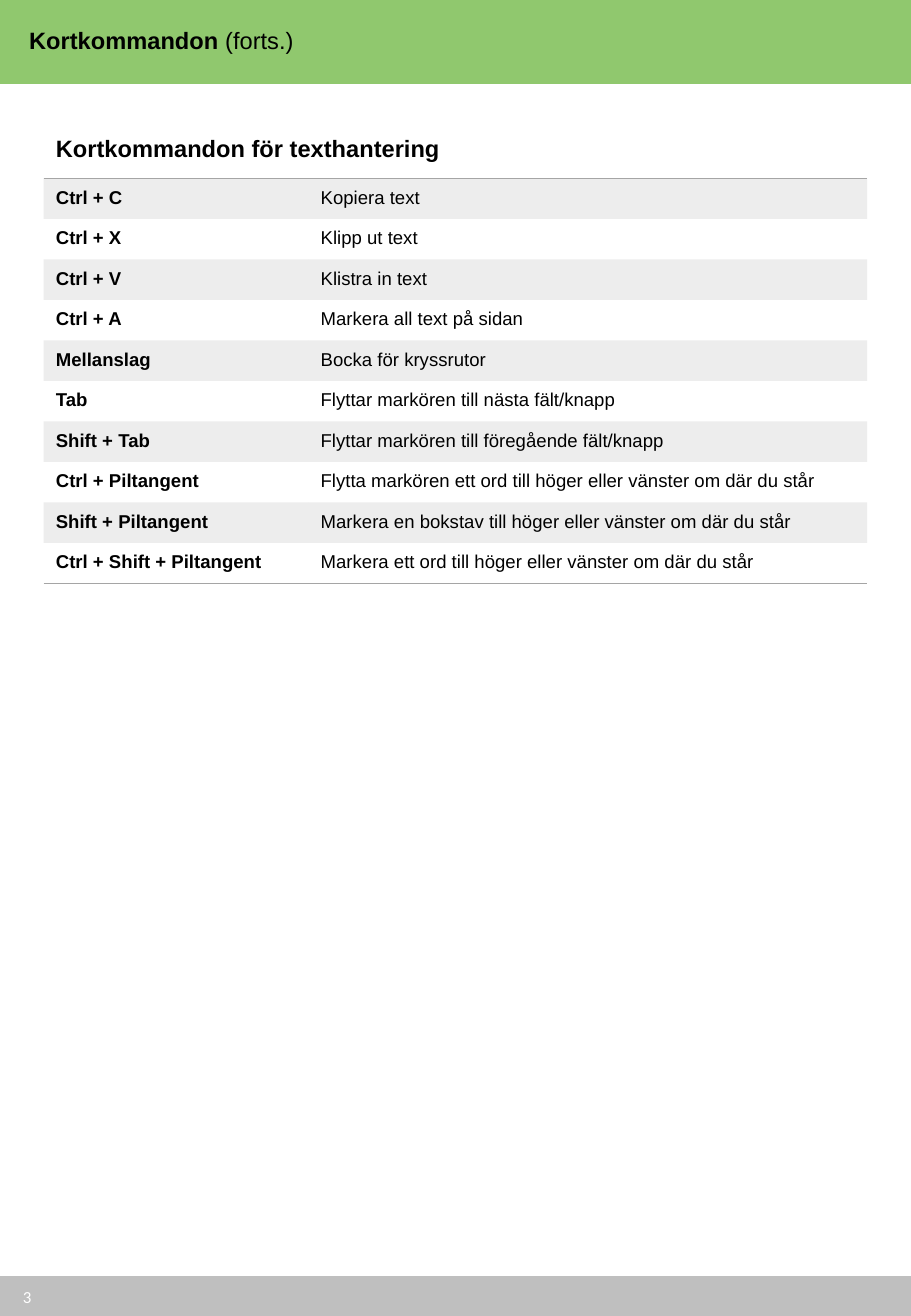
from pptx import Presentation
from pptx.dml.color import RGBColor
from pptx.enum.shapes import MSO_SHAPE as Shape
from pptx.enum.text import MSO_ANCHOR as Anchor, PP_ALIGN as Align
from pptx.oxml.ns import qn
from pptx.util import Inches, Pt
from lxml.etree import SubElement

WIDTH, HEIGHT = 7.5, 10.83
GREEN, GREY, RULE = "90C86E", "BFBFBF", "A5A5A5"
NO_STYLE = "{2D5ABB26-0587-4C30-8999-92F81FD0307C}"
HEADING = "Kortkommandon för texthantering"
SHORTCUTS = [
    ("Ctrl + C", "Kopiera text"),
    ("Ctrl + X", "Klipp ut text"),
    ("Ctrl + V", "Klistra in text"),
    ("Ctrl + A", "Markera all text på sidan"),
    ("Mellanslag", "Bocka för kryssrutor"),
    ("Tab", "Flyttar markören till nästa fält/knapp"),
    ("Shift + Tab", "Flyttar markören till föregående fält/knapp"),
    ("Ctrl + Piltangent", "Flytta markören ett ord till höger eller vänster om där du står"),
    ("Shift + Piltangent", "Markera en bokstav till höger eller vänster om där du står"),
    ("Ctrl + Shift + Piltangent", "Markera ett ord till höger eller vänster om där du står"),
]


def paint(color_format, hex_color):
    color_format.rgb = RGBColor.from_string(hex_color)


def write(paragraph, text, size=11, bold=False, color="000000", font="Arial"):
    run = paragraph.add_run()
    run.text = text
    run.font.size, run.font.bold, run.font.name = Pt(size), bold, font
    paint(run.font.color, color)


def set_margins(holder, left, top, right, bottom):
    holder.margin_left, holder.margin_top = Pt(left), Pt(top)
    holder.margin_right, holder.margin_bottom = Pt(right), Pt(bottom)


class Page:
    def __init__(self, deck):
        self.slide = deck.slides.add_slide(deck.slide_layouts[6])
        self.width, self.height = deck.slide_width, deck.slide_height

    def place(self, left, top, width, height):
        return (int(left * self.width), int(top * self.height),
                int(width * self.width), int(height * self.height))

    def band(self, top, height, color, outlined=False):
        band = self.slide.shapes.add_shape(Shape.RECTANGLE, *self.place(0, top, 1, height))
        band.shadow.inherit = False
        band.fill.solid()
        paint(band.fill.fore_color, color)
        if outlined:
            paint(band.line.color, color)
            band.line.width = Pt(0.75)
        else:
            band.line.fill.background()
        return band.text_frame

    def title(self, strong, light):
        frame = self.band(0, 0.69 / HEIGHT, GREEN)
        frame.word_wrap = True
        frame.vertical_anchor = Anchor.TOP
        set_margins(frame, 17.3, 17.3, 11.5, 17.3)
        line = frame.paragraphs[0]
        line.alignment, line.line_spacing = Align.LEFT, 0.9
        write(line, strong, size=14, bold=True)
        write(line, light, size=14)

    def page_number(self, number):
        place = self.place(0.09 / WIDTH, 10.48 / HEIGHT, 1.69 / WIDTH, 0.38 / HEIGHT)
        frame = self.slide.shapes.add_textbox(*place).text_frame
        frame.word_wrap = True
        frame.vertical_anchor = Anchor.MIDDLE
        write(frame.paragraphs[0], number, size=10, color="FFFFFF", font="Calibri")

    def shortcut_table(self, heading, shortcuts):
        place = self.place(0.36 / WIDTH, 1 / HEIGHT, 6.78 / WIDTH, 3.73 / HEIGHT)
        frame = self.slide.shapes.add_table(len(shortcuts) + 1, 2, *place)
        table = frame.table
        table.first_row = table.horz_banding = False
        frame._element.find(".//" + qn("a:tableStyleId")).text = NO_STYLE
        for column, width in zip(table.columns, (2.18, 4.6)):
            column.width = Inches(width)
        for row in table.rows:
            row.height = Pt(23.6)
        table.rows[0].height = Pt(33)
        table.cell(0, 0).merge(table.cell(0, 1))
        self.cell(table.cell(0, 0), heading, inset=8.4, size=14, bold=True)
        for index, shortcut in enumerate(shortcuts, 1):
            for column, text in enumerate(shortcut):
                self.cell(table.cell(index, column), text, shaded=index % 2 == 1,
                          bold=column == 0)
        for index in (0, len(shortcuts)):
            for cell in table.rows[index].cells:
                self.bottom_rule(cell)

    def cell(self, cell, text, inset=5.4, shaded=False, **style):
        set_margins(cell, 7.2, inset, 7.2, inset)
        write(cell.text_frame.paragraphs[0], text, **style)
        if shaded:
            cell.fill.solid()
            paint(cell.fill.fore_color, RULE)
            tint = cell._tc.tcPr.find(".//" + qn("a:srgbClr"))
            SubElement(tint, qn("a:alpha"), val="20000")
        else:
            cell.fill.background()

    def bottom_rule(self, cell):
        properties = cell._tc.get_or_add_tcPr()
        rule = SubElement(properties, qn("a:lnB"), w=str(Pt(1)))
        SubElement(SubElement(rule, qn("a:solidFill")), qn("a:srgbClr"), val=RULE)
        properties.insert(0, rule)


def main():
    deck = Presentation()
    deck.slide_width, deck.slide_height = Inches(WIDTH), Inches(HEIGHT)
    page = Page(deck)
    page.band(10.51 / HEIGHT, 0.32 / HEIGHT, GREY, outlined=True)
    page.title("Kortkommandon ", "(forts.)")
    page.page_number("3")
    page.shortcut_table(HEADING, SHORTCUTS)
    deck.save("out.pptx")


if __name__ == "__main__":
    main()
